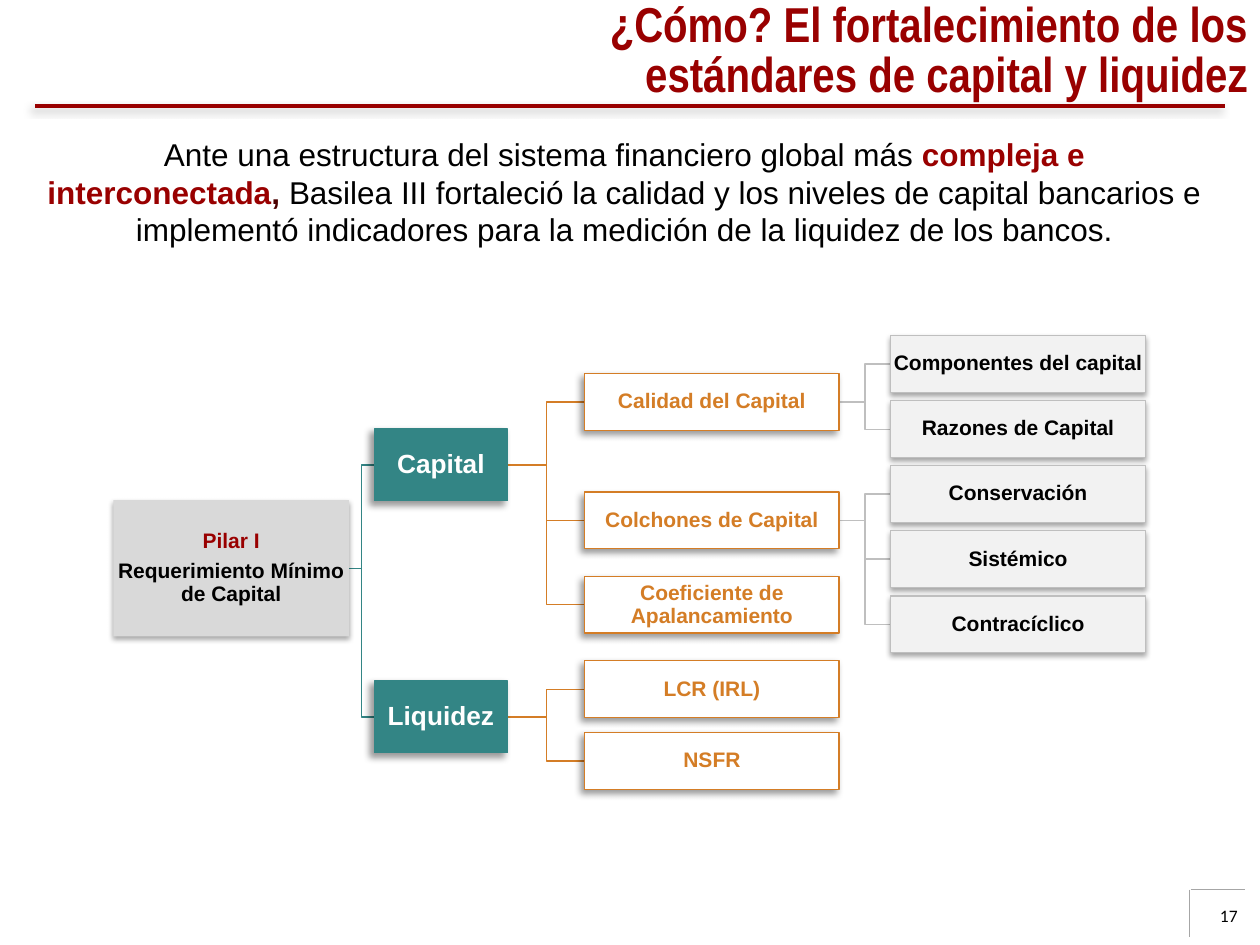
from dataclasses import dataclass, field
from typing import Iterator, Optional

import pptx
import pptx.dml.color
import pptx.enum.shapes
import pptx.enum.text
import pptx.oxml
import pptx.oxml.ns
import pptx.util
from pptx.dml.color import RGBColor
from pptx.util import Inches, Pt

RED = RGBColor(0x99, 0x00, 0x00)
DARK_RED = RGBColor(0x4C, 0x00, 0x00)
BLACK = RGBColor(0x00, 0x00, 0x00)
WHITE = RGBColor(0xFF, 0xFF, 0xFF)
TEAL = RGBColor(0x33, 0x85, 0x85)
ORANGE = RGBColor(0xD4, 0x7D, 0x26)
SILVER = RGBColor(0xBF, 0xBF, 0xBF)
PALE_GRAY = RGBColor(0xF2, 0xF2, 0xF2)
ROOT_GRAY = RGBColor(0xD9, 0xD9, 0xD9)
CORNER_GRAY = RGBColor(0xA6, 0xA6, 0xA6)

ALIGN = pptx.enum.text.PP_ALIGN
ANCHOR = pptx.enum.text.MSO_ANCHOR


@dataclass(frozen=True)
class Shadow:
    opacity: int
    blur: float
    distance: float
    angle: int


@dataclass(frozen=True)
class Level:
    """Look shared by every box in one column of the tree."""
    left: float
    width: float
    height: float
    fill: RGBColor
    line: Optional[RGBColor]
    text: RGBColor
    size: int
    shadow: Shadow


@dataclass(frozen=True)
class Node:
    text: str
    middle: float
    children: list["Node"] = field(default_factory=list)


DIAGONAL = Shadow(40, 4, 3, 135)
DOWNWARD = Shadow(35, 3.1, 1.8, 90)

LEVELS = [
    Level(0.9, 1.87, 1.08, ROOT_GRAY, None, BLACK, 12, DOWNWARD),
    Level(2.97, 1.06, 0.57, TEAL, TEAL, WHITE, 15, DIAGONAL),
    Level(4.64, 2.02, 0.45, WHITE, ORANGE, ORANGE, 12, DIAGONAL),
    Level(7.07, 2.02, 0.45, PALE_GRAY, SILVER, BLACK, 12, DOWNWARD),
]

DETAILS = ["Componentes del capital", "Razones de Capital", "Conservación",
           "Sistémico", "Contracíclico"]
DETAIL_NODES = [Node(text, 2.89 + 0.516 * row) for row, text in enumerate(DETAILS)]

TREE = Node("Pilar I\nRequerimiento Mínimo de Capital", 4.51, [
    Node("Capital", 3.69, [
        Node("Calidad del Capital", 3.19, DETAIL_NODES[:2]),
        Node("Colchones de Capital", 4.13, DETAIL_NODES[2:]),
        Node("Coeficiente de Apalancamiento", 4.8),
    ]),
    Node("Liquidez", 5.69, [Node("LCR (IRL)", 5.47), Node("NSFR", 6.04)]),
])

BODY_RUNS = [
    ("Ante una estructura del sistema financiero global más ", BLACK, False),
    ("compleja e interconectada", RED, True),
    (", ", DARK_RED, True),
    ("Basilea III fortaleció la calidad y los niveles de capital bancarios e "
     "implementó indicadores para la medición de la liquidez de los bancos.", BLACK, False),
]


def walk(node: Node, depth: int = 0) -> Iterator[tuple[Node, int]]:
    yield node, depth
    for child in node.children:
        yield from walk(child, depth + 1)


def set_effects(shape, shadow: Optional[Shadow] = None) -> None:
    """Replace the theme shadow by the given one, or by none."""
    effects = pptx.oxml.parse_xml(f"<a:effectLst {pptx.oxml.ns.nsdecls('a')}/>")
    if shadow:
        effects.append(pptx.oxml.parse_xml(
            f'<a:outerShdw {pptx.oxml.ns.nsdecls("a")} blurRad="{Pt(shadow.blur)}" '
            f'dist="{Pt(shadow.distance)}" dir="{shadow.angle * 60000}" algn="ctr" '
            f'rotWithShape="0"><a:srgbClr val="000000">'
            f'<a:alpha val="{shadow.opacity * 1000}"/></a:srgbClr></a:outerShdw>'))
    shape._element.spPr.append(effects)


def style_font(font, name: str, size: int, color: RGBColor, bold: bool = False) -> None:
    font.name = name
    font.size = Pt(size)
    font.color.rgb = color
    font.bold = bold


def add_rule(slide, start: tuple[float, float], end: tuple[float, float],
             color: RGBColor, width: float, shadow: Optional[Shadow] = None) -> None:
    rule = slide.shapes.add_connector(
        pptx.enum.shapes.MSO_CONNECTOR.STRAIGHT, *map(Inches, start + end))
    rule.line.color.rgb = color
    rule.line.width = Pt(width)
    set_effects(rule, shadow)


def add_link(slide, parent: Node, child: Node, depth: int) -> None:
    """Draw the elbow from a parent at this depth to its child."""
    start = LEVELS[depth].left + LEVELS[depth].width
    end = LEVELS[depth + 1].left
    bend = (start + end) / 2
    builder = slide.shapes.build_freeform(Inches(start), Inches(parent.middle))
    corners = [(bend, parent.middle), (bend, child.middle), (end, child.middle)]
    builder.add_line_segments([(Inches(x), Inches(y)) for x, y in corners], close=False)
    link = builder.convert_to_shape()
    link.fill.background()
    link.line.color.rgb = LEVELS[depth + 1].line
    link.line.width = Pt(0.75)
    link.shadow.inherit = False


def add_box(slide, node: Node, level: Level) -> None:
    box = slide.shapes.add_shape(
        pptx.enum.shapes.MSO_SHAPE.RECTANGLE, Inches(level.left),
        Inches(node.middle - level.height / 2), Inches(level.width), Inches(level.height))
    box.fill.solid()
    box.fill.fore_color.rgb = level.fill
    if level.line is None:
        box.line.fill.background()
    else:
        box.line.color.rgb = level.line
        box.line.width = Pt(0.75)
    set_effects(box, level.shadow)
    frame = box.text_frame
    frame.word_wrap = True
    frame.vertical_anchor = ANCHOR.MIDDLE
    frame.margin_left = frame.margin_right = Inches(0.01)
    frame.margin_top = frame.margin_bottom = Inches(0.01)
    frame.text = node.text
    for paragraph in frame.paragraphs:
        paragraph.alignment = ALIGN.CENTER
        paragraph.line_spacing = 0.9
        paragraph.space_after = Pt(4)
        style_font(paragraph.font, "Arial", level.size, level.text, bold=True)


def add_title(slide) -> None:
    title = slide.shapes.title
    title.left, title.top = Inches(3.43), Inches(0.02)
    title.width, title.height = Inches(6.57), Inches(0.79)
    frame = title.text_frame
    frame.text = "¿Cómo? El fortalecimiento de los estándares de capital y liquidez"
    frame.auto_size = pptx.enum.text.MSO_AUTO_SIZE.NONE
    frame.vertical_anchor = ANCHOR.MIDDLE
    paragraph = frame.paragraphs[0]
    paragraph.alignment = ALIGN.RIGHT
    paragraph.line_spacing = 0.85
    style_font(paragraph.font, "Arial Narrow", 28, RED, bold=True)


def add_text_box(slide, left: float, top: float, width: float, height: float, alignment):
    """Add a wrapping text box and return its first paragraph."""
    box = slide.shapes.add_textbox(*map(Inches, (left, top, width, height)))
    box.text_frame.word_wrap = True
    paragraph = box.text_frame.paragraphs[0]
    paragraph.alignment = alignment
    return paragraph


def main() -> None:
    presentation = pptx.Presentation()
    presentation.slide_width, presentation.slide_height = Inches(10), Inches(7.5)
    slide = presentation.slides.add_slide(presentation.slide_layouts[5])

    add_title(slide)
    add_rule(slide, (0.28, 0.84), (9.72, 0.84), RED, 2, DIAGONAL)
    add_rule(slide, (9.45, 7.06), (9.88, 7.06), CORNER_GRAY, 0.25)
    add_rule(slide, (9.44, 7.06), (9.44, 7.44), CORNER_GRAY, 0.25)

    number = add_text_box(slide, 9.3, 7.13, 0.62, 0.4, ALIGN.RIGHT)
    number.text = "17"
    style_font(number.font, "Calibri", 10, BLACK)

    body = add_text_box(slide, 0.27, 1.02, 9.37, 1.31, ALIGN.CENTER)
    for text, color, bold in BODY_RUNS:
        run = body.add_run()
        run.text = text
        style_font(run.font, "Arial", 18, color, bold)

    for node, depth in walk(TREE):
        for child in node.children:
            add_link(slide, node, child, depth)
    for node, depth in walk(TREE):
        add_box(slide, node, LEVELS[depth])
        if node is TREE:
            heading = slide.shapes[-1].text_frame.paragraphs[0]
            heading.font.color.rgb = RED

    presentation.save("out.pptx")


if __name__ == "__main__":
    main()
